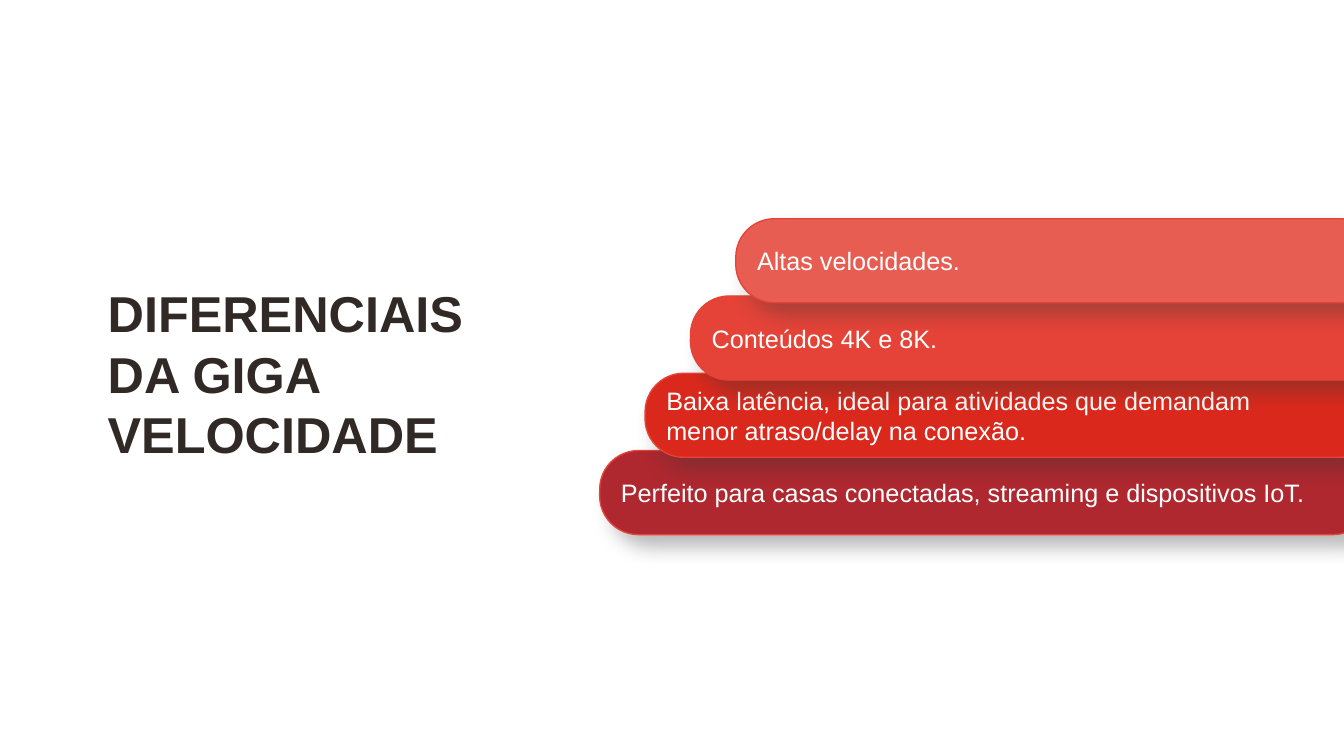
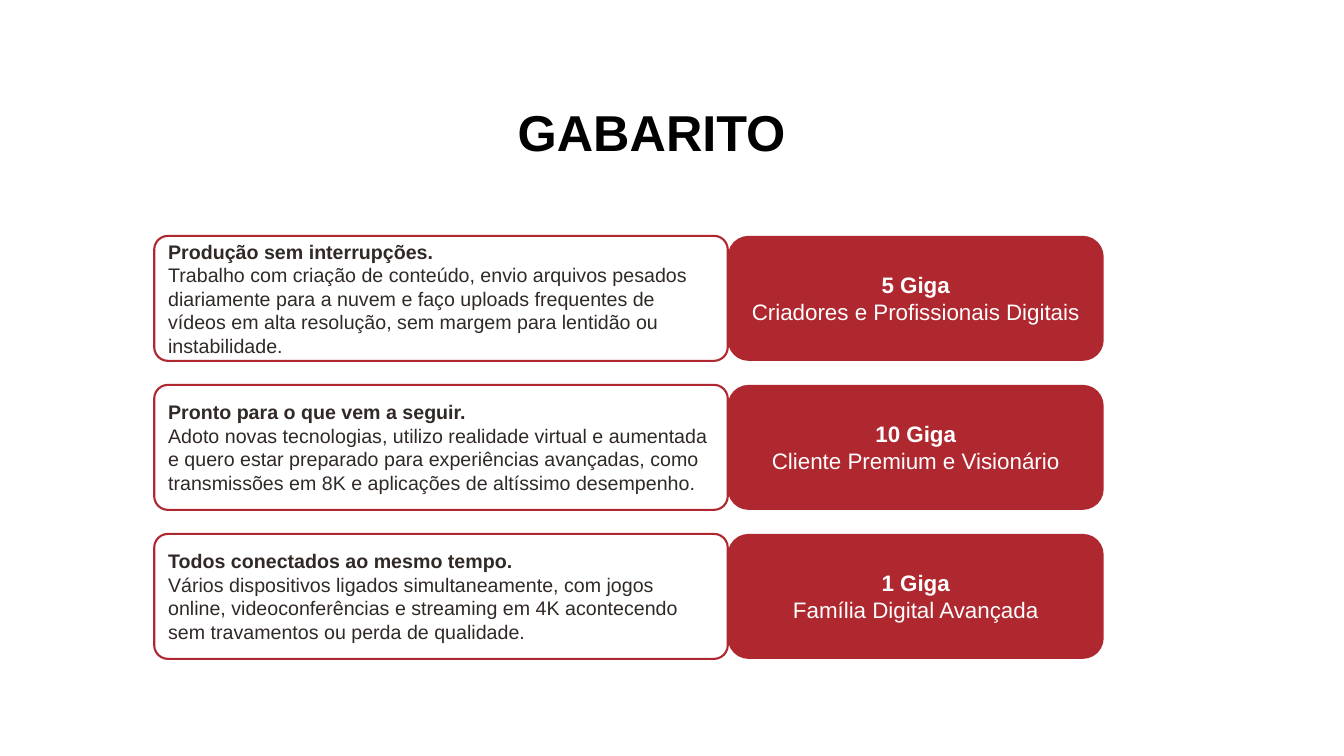
from dataclasses import dataclass

from lxml.etree import SubElement
from pptx import Presentation
from pptx.dml.color import RGBColor as RGB
from pptx.enum.shapes import MSO_SHAPE as SHAPE
from pptx.enum.text import MSO_ANCHOR as ANCHOR, PP_ALIGN as ALIGN
from pptx.oxml.ns import qn
from pptx.util import Pt

COLS, ROWS = 80, 45
CELL = 152400  # one square grid cell, a sixth of an inch


@dataclass(frozen=True)
class Theme:
    font: str = "Arial"
    ink: str = "302926"
    black: str = "000000"
    white: str = "FFFFFF"
    wine: str = "AF272F"
    red: str = "DA291C"
    coral: str = "E54337"
    salmon: str = "E85D52"
    shadow: str = "3B3838"
    title: int = 36
    bar: int = 18
    answer: int = 16
    case: int = 14


THEME = Theme()

BARS = [
    ("Altas velocidades.", THEME.salmon),
    ("Conteúdos 4K e 8K.", THEME.coral),
    ("Baixa latência, ideal para atividades que demandam\v"
     "menor atraso/delay na conexão.", THEME.red),
    ("Perfeito para casas conectadas, streaming e dispositivos IoT.", THEME.wine),
]

CASES = [
    ("Produção sem interrupções.",
     "Trabalho com criação de conteúdo, envio arquivos pesados diariamente para a "
     "nuvem e faço uploads frequentes de vídeos em alta resolução, sem margem para "
     "lentidão ou instabilidade.",
     "5 Giga", "Criadores e Profissionais Digitais"),
    ("Pronto para o que vem a seguir.",
     "Adoto novas tecnologias, utilizo realidade virtual e aumentada e quero estar "
     "preparado para experiências avançadas, como transmissões em 8K e aplicações "
     "de altíssimo desempenho.",
     "10 Giga", "Cliente Premium e Visionário"),
    ("Todos conectados ao mesmo tempo.",
     "Vários dispositivos ligados simultaneamente, com jogos online, "
     "videoconferências e streaming em 4K acontecendo sem travamentos ou perda de "
     "qualidade.",
     "1 Giga", "Família Digital Avançada"),
]


def grid(*cells):
    return [round(c * CELL) for c in cells]


def write(sp, lines, size, color, align=ALIGN.LEFT, bold_first=False):
    tf = sp.text_frame
    tf.word_wrap = True
    tf.text = "\n".join(lines)
    for i, p in enumerate(tf.paragraphs):
        p.alignment = align
        for r in p.runs:
            r.font.name = THEME.font
            r.font.size = Pt(size)
            r.font.bold = bold_first and i == 0
            r.font.color.rgb = RGB.from_string(color)


def add_title(slide, text, box, color, align=ALIGN.LEFT):
    sp = slide.shapes.add_textbox(*grid(*box))
    write(sp, [text], THEME.title, color, align, bold_first=True)


def add_rounded(slide, box, fill, line=None, weight=1, corner=None):
    sp = slide.shapes.add_shape(SHAPE.ROUNDED_RECTANGLE, *grid(*box))
    sp.shadow.inherit = False
    sp.fill.solid()
    sp.fill.fore_color.rgb = RGB.from_string(fill)
    if line:
        sp.line.color.rgb = RGB.from_string(line)
        sp.line.width = Pt(weight)
    else:
        sp.line.fill.background()
    if corner is not None:
        sp.adjustments[0] = corner
    sp.text_frame.vertical_anchor = ANCHOR.MIDDLE
    return sp


def add_shadow(sp):
    """Soft shadow, falling to the lower right."""
    effects = sp._element.spPr.find(qn("a:effectLst"))
    outer = SubElement(effects, qn("a:outerShdw"), blurRad=str(Pt(14)),
                       dist=str(Pt(11)), dir=str(45 * 60000),
                       algn="tl", rotWithShape="0")
    color = SubElement(outer, qn("a:srgbClr"), val=THEME.shadow)
    SubElement(color, qn("a:alpha"), val="35000")


def add_bars(slide):
    """Staircase of bars that run off the right edge, each above the next."""
    left, top, height = 43.8, 13.02, 5
    step_x, step_y = 2.7, 4.6
    last = len(BARS) - 1
    for i, (text, fill) in reversed(list(enumerate(BARS))):
        x = left - i * step_x
        right = 81.66 if i == last else 82.1
        sp = add_rounded(slide, (x, top + i * step_y, right - x, height),
                         fill, THEME.coral, corner=0.46)
        add_shadow(sp)
        write(sp, [text], THEME.bar, THEME.white)


def add_cases(slide):
    """Rows that pair a customer case with its answer."""
    left, top, height, pitch = 9.18, 14.04, 7.44, 8.87
    case_w, answer_w = 34.14, 22.38
    for i, (head, body, speed, profile) in enumerate(CASES):
        y = top + i * pitch
        answer = add_rounded(slide, (left + case_w, y, answer_w, height), THEME.wine)
        write(answer, [speed, profile], THEME.answer, THEME.white,
              ALIGN.CENTER, bold_first=True)
        case = add_rounded(slide, (left, y, case_w, height), THEME.white,
                           THEME.wine, 1.5, corner=0.11)
        write(case, [head, body], THEME.case, THEME.ink, bold_first=True)


def main():
    prs = Presentation()
    prs.slide_width, prs.slide_height = grid(COLS, ROWS)
    blank = prs.slide_layouts[6]

    benefits = prs.slides.add_slide(blank)
    add_title(benefits, "DIFERENCIAIS DA GIGA VELOCIDADE",
              (5.82, 16.5, 23.82, 11.52), THEME.ink)
    add_bars(benefits)

    answers = prs.slides.add_slide(blank)
    add_title(answers, "GABARITO", (23.1, 5.7, 31.38, 4.26),
              THEME.black, ALIGN.CENTER)
    add_cases(answers)

    prs.save("out.pptx")


if __name__ == "__main__":
    main()
